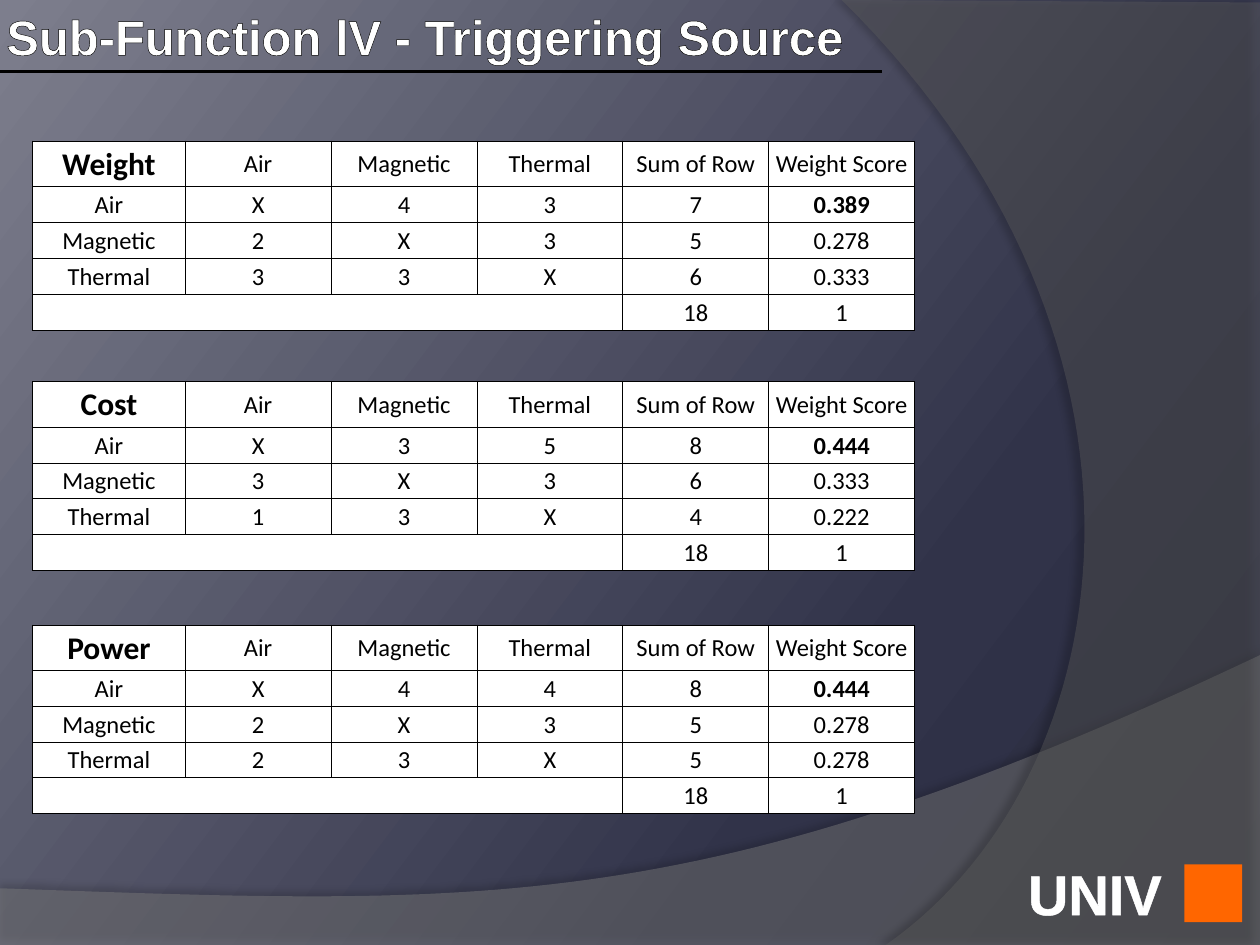
import copy

import lxml.etree
import pptx
import pptx.dml.color
import pptx.enum.shapes
import pptx.enum.text
import pptx.oxml.ns
import pptx.util

Inches = pptx.util.Inches
Pt = pptx.util.Pt
RGBColor = pptx.dml.color.RGBColor
qn = pptx.oxml.ns.qn

BLACK = RGBColor(0x00, 0x00, 0x00)
WHITE = RGBColor(0xFF, 0xFF, 0xFF)
ORANGE = RGBColor(0xFF, 0x66, 0x00)
WAVE_GREY = RGBColor(0x7F, 0x7F, 0x7F)
ARC_GREY = RGBColor(0x5E, 0x5E, 0x5E)
BACKGROUND_STOPS = [
    (0, RGBColor(0x29, 0x2B, 0x3D)),
    (0.3, RGBColor(0x31, 0x33, 0x49)),
    (1, RGBColor(0x7D, 0x7E, 0x8D)),
]

SOURCES = ["Air", "Magnetic", "Thermal"]
CRITERIA = [
    ("Weight", 1.12, [["X", 4, 3], [2, "X", 3], [3, 3, "X"]]),
    ("Cost", 3.03, [["X", 3, 5], [3, "X", 3], [1, 3, "X"]]),
    ("Power", 4.96, [["X", 4, 4], [2, "X", 3], [2, 3, "X"]]),
]


def add_child(parent, tag, **attributes):
    child = lxml.etree.SubElement(parent, qn(tag))
    for name, value in attributes.items():
        child.set(name, str(value))
    return child


def add_solid_fill(parent, color):
    add_child(add_child(parent, "a:solidFill"), "a:srgbClr", val=color)


def add_span(para, text, font, size, color, bold=False):
    span = para.add_run()
    span.text = text
    span.font.name = font
    span.font.size = Pt(size)
    span.font.bold = bold
    span.font.color.rgb = color
    return span


def outline_span(span, color, width):
    properties = span.font._element
    line = add_child(properties, "a:ln", w=Pt(width))
    add_solid_fill(line, color)
    properties.insert(0, line)


def set_background(page):
    fill = page.background.fill
    fill.gradient()
    fill.gradient_angle = 360 - 217
    stop_list = page._element.find(".//" + qn("a:gsLst"))
    stop_list.insert(1, copy.deepcopy(stop_list[0]))
    for stop, (position, color) in zip(fill.gradient_stops, BACKGROUND_STOPS):
        stop.position = position
        stop.color.rgb = color


def curve_points(start, first, second, end, steps=60):
    points = []
    for step in range(steps + 1):
        t = step / steps
        weights = [(1 - t) ** 3, 3 * t * (1 - t) ** 2, 3 * t * t * (1 - t), t ** 3]
        points.append(tuple(
            sum(weight * value for weight, value in zip(weights, values))
            for values in zip(start, first, second, end)
        ))
    return points


def add_sweep(page, points, color, opacity, shadow_opacity, distance, direction):
    corners = [(Inches(x), Inches(y)) for x, y in points]
    builder = page.shapes.build_freeform(*corners[0], scale=1)
    builder.add_line_segments(corners[1:], close=True)
    sweep = builder.convert_to_shape()
    sweep.fill.solid()
    sweep.fill.fore_color.rgb = color
    sweep.line.fill.background()
    sweep.shadow.inherit = False
    properties = sweep._element.spPr
    fill_color = properties.find(qn("a:solidFill"))[0]
    add_child(fill_color, "a:alpha", val=opacity * 1000)
    shadow = add_child(
        properties.find(qn("a:effectLst")), "a:outerShdw",
        blurRad=Pt(4), dist=Pt(distance), dir=direction * 60000,
        algn="ctr", rotWithShape=0,
    )
    shadow_color = add_child(shadow, "a:srgbClr", val=BLACK)
    add_child(shadow_color, "a:alpha", val=shadow_opacity * 1000)


def add_backdrop(page, width, height):
    set_background(page)
    wave = [(0, height), (width, height)]
    wave += curve_points((width, 5.2), (5.59, 7.29), (3.91, 7.19), (0, 7.05))
    add_sweep(page, wave, WAVE_GREY, 45, 35, 3.5, 270)
    arc = [(width, 0.02), (width, height)]
    arc += curve_points((7.03, height), (8.91, 6.19), (9.47, 2.75), (6.68, 0))
    add_sweep(page, arc, ARC_GREY, 40, 45, 4, 180)


def add_heading(page, left, top, width, height):
    title = page.shapes.title
    page.shapes._spTree.append(title._element)
    title.left, title.top = Inches(left), Inches(top)
    title.width, title.height = Inches(width), Inches(height)
    frame = title.text_frame
    frame.word_wrap = True
    frame.auto_size = pptx.enum.text.MSO_AUTO_SIZE.NONE
    frame.vertical_anchor = pptx.enum.text.MSO_ANCHOR.TOP
    frame.margin_left = frame.margin_right = Inches(0.05)
    frame.margin_top = frame.margin_bottom = Inches(0.05)
    para = frame.paragraphs[0]
    para.alignment = pptx.enum.text.PP_ALIGN.LEFT
    span = add_span(para, "Sub-Function lV - Triggering Source", "Arial", 28, WHITE, True)
    outline_span(span, BLACK, 1)
    rule = page.shapes.add_connector(
        pptx.enum.shapes.MSO_CONNECTOR.STRAIGHT,
        Inches(left), Inches(top + 0.57), Inches(left + 7), Inches(top + 0.57),
    )
    rule.line.color.rgb = BLACK
    rule.line.width = Pt(1.5)
    add_child(rule._element.spPr, "a:effectLst")


def fill_cell(cell, text, size, bold):
    properties = cell._tc.get_or_add_tcPr()
    for side in ("a:lnL", "a:lnR", "a:lnT", "a:lnB"):
        add_solid_fill(add_child(properties, side, w=Pt(0.5)), BLACK)
    cell.fill.solid()
    cell.fill.fore_color.rgb = WHITE
    cell.vertical_anchor = pptx.enum.text.MSO_ANCHOR.MIDDLE
    cell.margin_left = cell.margin_right = cell.margin_top = Inches(0.01)
    cell.margin_bottom = 0
    para = cell.text_frame.paragraphs[0]
    para.alignment = pptx.enum.text.PP_ALIGN.CENTER
    if text:
        add_span(para, text, "Calibri", size, BLACK, bold)
    else:
        add_child(para._p, "a:endParaRPr", sz=size * 100)


def score_rows(criterion, ratings):
    sums = [sum(value for value in row if value != "X") for row in ratings]
    total = sum(sums)
    rows = [[criterion, *SOURCES, "Sum of Row", "Weight Score"]]
    for source, row, row_sum in zip(SOURCES, ratings, sums):
        rows.append([source, *row, row_sum, f"{row_sum / total:.3f}"])
    rows.append(["", "", "", "", total, 1])
    return rows, 1 + sums.index(max(sums))


def add_score_table(page, criterion, ratings, left, top, width, height):
    rows, best_row = score_rows(criterion, ratings)
    table = page.shapes.add_table(
        len(rows), len(rows[0]), Inches(left), Inches(top), Inches(width), Inches(height)
    ).table
    table.first_row = table.horz_banding = False
    first_width, header_height = 1.21, 0.36
    for index, column in enumerate(table.columns):
        column.width = Inches((width - first_width) / 5 if index else first_width)
    for index, row in enumerate(table.rows):
        row.height = Inches((height - header_height) / 4 if index else header_height)
    for row_index, row in enumerate(rows):
        for column_index, value in enumerate(row):
            is_name = row_index == column_index == 0
            is_best = (row_index, column_index) == (best_row, 5)
            fill_cell(table.cell(row_index, column_index), str(value),
                      18 if is_name else 14, is_name or is_best)
    table.cell(4, 0).merge(table.cell(4, 3))


def add_badge(page, left, top, width, height):
    box = page.shapes.add_textbox(Inches(left), Inches(top), Inches(1.39), Inches(height))
    box.text_frame.word_wrap = False
    span = add_span(box.text_frame.paragraphs[0], "UNIV", "Arial", 32, WHITE, True)
    outline_span(span, WHITE, 1.4)
    side = 0.46
    emblem = page.shapes.add_shape(
        pptx.enum.shapes.MSO_SHAPE.RECTANGLE,
        Inches(left + width - side), Inches(top + 0.09), Inches(side), Inches(side),
    )
    emblem.fill.solid()
    emblem.fill.fore_color.rgb = ORANGE
    emblem.line.fill.background()
    emblem.shadow.inherit = False


def main():
    deck = pptx.Presentation()
    deck.slide_width, deck.slide_height = Inches(10), Inches(7.5)
    page = deck.slides.add_slide(deck.slide_layouts[5])
    add_backdrop(page, 10, 7.5)
    add_heading(page, 0, 0, 9.9, 0.55)
    for criterion, top, ratings in CRITERIA:
        add_score_table(page, criterion, ratings, 0.26, top, 7, 1.5)
    add_badge(page, 8.06, 6.77, 1.8, 0.64)
    deck.save("out.pptx")


if __name__ == "__main__":
    main()
